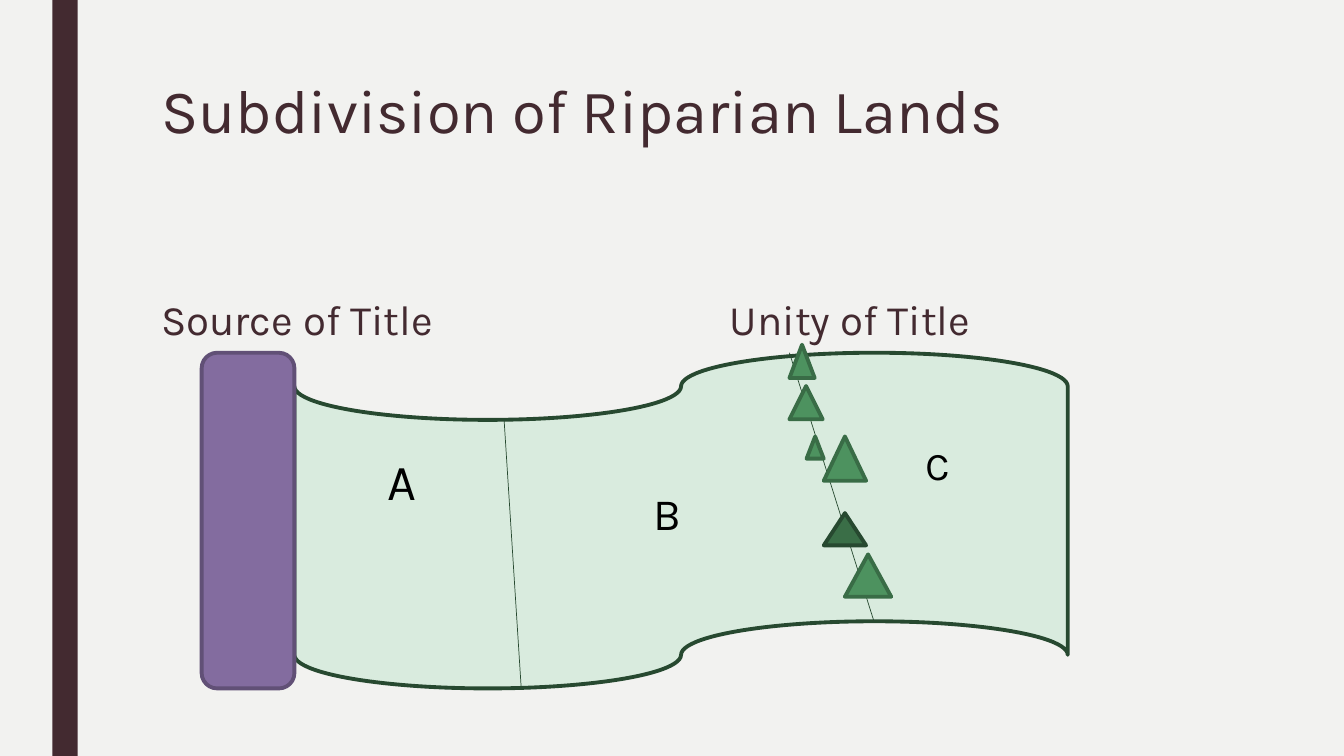
from typing import NamedTuple

from lxml import etree
from pptx import Presentation
from pptx.dml.color import RGBColor
from pptx.enum.shapes import MSO_CONNECTOR, MSO_SHAPE
from pptx.enum.text import MSO_ANCHOR, MSO_AUTO_SIZE, PP_ALIGN
from pptx.oxml.ns import qn
from pptx.util import Inches, Pt

STRAIGHT = MSO_CONNECTOR.STRAIGHT
RECTANGLE = MSO_SHAPE.RECTANGLE
ROUNDED = MSO_SHAPE.ROUNDED_RECTANGLE
TAPE = MSO_SHAPE.FLOWCHART_PUNCHED_TAPE
TRIANGLE = MSO_SHAPE.ISOSCELES_TRIANGLE
TOP, BOTTOM = MSO_ANCHOR.TOP, MSO_ANCHOR.BOTTOM
LEFT = PP_ALIGN.LEFT
NO_AUTOFIT = MSO_AUTO_SIZE.NONE

FONT = "Karla"
OUTLINE_WIDTH = 2.75
COLOURS = {
    "background": "F2F2F0",
    "heading": "432A30",
    "label": "000000",
    "land": "D9EBDE",
    "boundary": "274930",
    "river": "836C9F",
    "river_edge": "615076",
    "tree": "4D925F",
    "tree_edge": "396C46",
    "dark_tree": "3A6E47",
}


class Box(NamedTuple):
    left: float
    top: float
    width: float
    height: float


class Area(NamedTuple):
    kind: MSO_SHAPE
    box: Box
    fill: str
    edge: str | None = None


class Caption(NamedTuple):
    text: str
    box: Box
    size: int
    colour: str = "label"
    anchor: MSO_ANCHOR = TOP
    spacing: float = 1.0


class Boundary(NamedTuple):
    start: tuple[float, float]
    end: tuple[float, float]


def tree(box: Box, fill: str = "tree", edge: str = "tree_edge") -> Area:
    return Area(TRIANGLE, box, fill, edge)


SIDEBAR = Area(RECTANGLE, Box(0.52, 0, 0.25, 7.5), "heading")
TITLE = Caption("Subdivision of Riparian Lands", Box(1.5, 0.75, 10.5, 1.62),
                44, "heading", TOP, 0.89)
HEADINGS = [
    Caption(text, Box(left, 2.56, 4.86, 0.9), 30, "heading", BOTTOM, 0.84)
    for text, left in (("Source of Title", 1.5), ("Unity of Title", 7.14))
]
LAND = Area(TAPE, Box(2.92, 3.5, 7.67, 3.33), "land", "boundary")
BOUNDARIES = [
    Boundary((5, 4.17), (5.17, 6.83)),
    Boundary((7.83, 3.5), (8.67, 6.17)),
]
RIVER = Area(ROUNDED, Box(2, 3.5, 0.92, 3.33), "river", "river_edge")
PARCELS = [
    Caption("A", Box(3.75, 4.42, 0.67, 0.71), 36),
    Caption("B", Box(6.38, 4.77, 0.75, 0.64), 32),
    Caption("C", Box(9.08, 4.33, 0.92, 0.57), 28),
]
TREES = [
    tree(Box(7.83, 3.83, 0.33, 0.33)),
    tree(Box(8.17, 4.33, 0.42, 0.44)),
    tree(Box(8.17, 5.09, 0.42, 0.32), "dark_tree", "boundary"),
    tree(Box(8.38, 5.5, 0.46, 0.42)),
    tree(Box(8, 4.33, 0.17, 0.22)),
    tree(Box(7.83, 3.42, 0.25, 0.33)),
]


def rgb(name: str) -> RGBColor:
    return RGBColor.from_string(COLOURS[name])


def draw_area(slide, area: Area) -> None:
    shape = slide.shapes.add_shape(area.kind, *map(Inches, area.box))
    shape.shadow.inherit = False
    shape.fill.solid()
    shape.fill.fore_color.rgb = rgb(area.fill)
    if area.edge is None:
        shape.line.fill.background()
    else:
        shape.line.color.rgb = rgb(area.edge)
        shape.line.width = Pt(OUTLINE_WIDTH)


def draw_boundary(slide, boundary: Boundary) -> None:
    ends = map(Inches, boundary.start + boundary.end)
    line = slide.shapes.add_connector(STRAIGHT, *ends)
    line.line.color.rgb = rgb("boundary")
    line.line.width = Pt(0.5)
    etree.SubElement(line._element.spPr, qn("a:effectLst"))


def write_caption(shape, caption: Caption) -> None:
    """Place and format a text box or placeholder, and fill in its text."""
    for side, length in caption.box._asdict().items():
        setattr(shape, side, Inches(length))
    frame = shape.text_frame
    frame.text = caption.text
    paragraph = frame.paragraphs[0]
    formats = {
        frame: {"word_wrap": True, "auto_size": NO_AUTOFIT,
                "vertical_anchor": caption.anchor},
        paragraph: {"alignment": LEFT, "line_spacing": caption.spacing},
    }
    for target, values in formats.items():
        for attribute, value in values.items():
            setattr(target, attribute, value)
    font = paragraph.runs[0].font
    for attribute, value in {"name": FONT, "size": Pt(caption.size)}.items():
        setattr(font, attribute, value)
    font.color.rgb = rgb(caption.colour)


def add_caption(slide, caption: Caption) -> None:
    write_caption(slide.shapes.add_textbox(*map(Inches, caption.box)), caption)


def main() -> None:
    deck = Presentation()
    deck.slide_width, deck.slide_height = Inches(13.33), Inches(7.5)
    slide = deck.slides.add_slide(deck.slide_layouts.get_by_name("Title Only"))
    slide.background.fill.solid()
    slide.background.fill.fore_color.rgb = rgb("background")

    draw_area(slide, SIDEBAR)
    write_caption(slide.shapes.title, TITLE)
    for heading in HEADINGS:
        add_caption(slide, heading)
    draw_area(slide, LAND)
    for boundary in BOUNDARIES:
        draw_boundary(slide, boundary)
    draw_area(slide, RIVER)
    for parcel in PARCELS:
        add_caption(slide, parcel)
    for area in TREES:
        draw_area(slide, area)

    deck.save("out.pptx")


if __name__ == "__main__":
    main()
